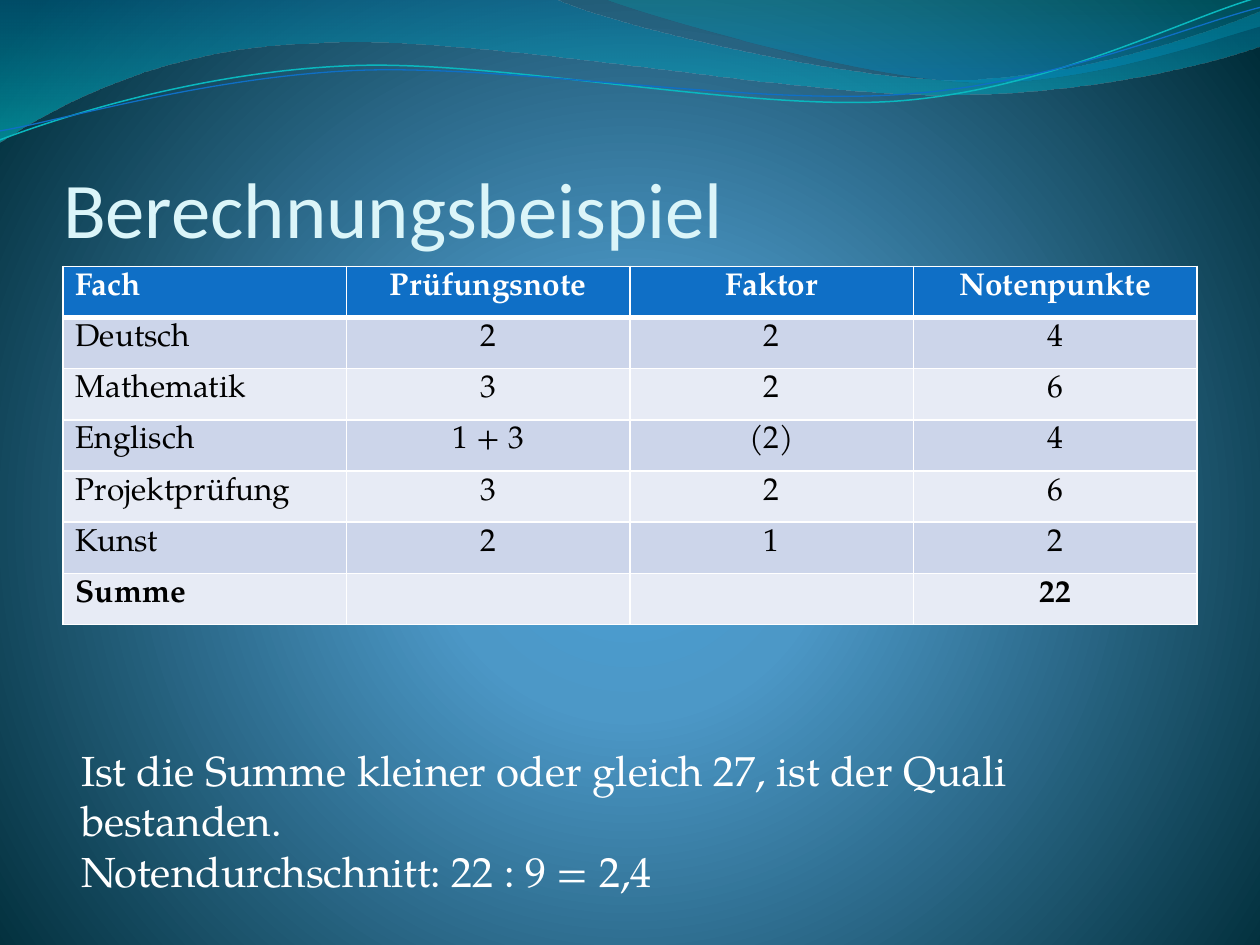
from lxml.etree import SubElement
from pptx import Presentation
from pptx.dml.color import RGBColor
from pptx.enum.text import MSO_ANCHOR, MSO_AUTO_SIZE, PP_ALIGN
from pptx.oxml.ns import qn
from pptx.util import Cm, Pt

WHITE = RGBColor(0xFF, 0xFF, 0xFF)
BLACK = RGBColor(0x00, 0x00, 0x00)
BLUE = RGBColor(0x0F, 0x6F, 0xC6)
TURQUOISE = RGBColor(0x0A, 0xB8, 0xBF)
TITLE_COLOR = RGBColor(0xDB, 0xF5, 0xF9)
BANDS = RGBColor(0xE7, 0xEB, 0xF5), RGBColor(0xCC, 0xD5, 0xEA)

# Gradient stops: position in percent, colour, opacity in percent
BACKGROUND_STOPS = [
    (0, RGBColor(0x4A, 0xA0, 0xD6), 100),
    (25, RGBColor(0x4C, 0x98, 0xC7), 100),
    (100, RGBColor(0x00, 0x2C, 0x38), 100),
]
LONG_WAVE_STOPS = [
    (0, RGBColor(0x00, 0x74, 0xA1), 45),
    (100, RGBColor(0x00, 0xC6, 0xCF), 55),
]
RIGHT_WAVE_STOPS = [
    (0, RGBColor(0x00, 0xA1, 0xA9), 30),
    (80, RGBColor(0x00, 0x8B, 0xBF), 45),
]

# Outlines in cm: a start point, then lines (2 numbers) or Bézier curves (6)
LONG_WAVE = [
    (0, 0), (11.18, -0.03),
    (12.09, 0.43, 16.87, 1.6, 19.25, 1.6),
    (21.67, 1.6, 24.33, 0.66, 25.4, 0.23),
    (25.43, 0.91),
    (24.97, 1.12, 22.1, 1.93, 18.95, 1.91),
    (15.8, 1.91, 9.7, 0.71, 6.53, 0.86),
    (3.28, 0.91, 1.17, 2.11, -0.03, 2.87),
]
RIGHT_WAVE = [
    (12.17, -0.03),
    (12.93, 0.28, 17.32, 1.57, 19.53, 1.65),
    (21.74, 1.75, 24.41, 0.81, 25.4, 0.53),
    (25.4, 0),
]
# The two thin lines are tilted after drawing
TURQUOISE_LINE = [
    (-0.05, 2.22),
    (1.19, 1.82, 4.02, 1.04, 7.06, 1.06),
    (10.05, 1.07, 15.02, 2.37, 18.08, 2.29),
    (21.13, 2.2, 23.87, 0.91, 25.41, 0.55),
]
BLUE_LINE = [
    (-0.04, 2.04),
    (1.16, 1.9, 4.18, 1.15, 7.2, 1.16),
    (10.25, 1.18, 15.13, 2.25, 18.18, 2.16),
    (21.21, 2.1, 23.94, 1.06, 25.45, 0.75),
]
LINE_TILT = 357.3

BODY_FONT = "TeX Gyre Pagella"
GRADES = [
    ("Fach", "Prüfungsnote", "Faktor", "Notenpunkte"),
    ("Deutsch", "2", "2", "4"),
    ("Mathematik", "3", "2", "6"),
    ("Englisch", "1 + 3", "(2)", "4"),
    ("Projektprüfung", "3", "2", "6"),
    ("Kunst", "2", "1", "2"),
    ("Summe", "", "", "22"),
]
RESULT = (
    "Ist die Summe kleiner oder gleich 27, ist der Quali bestanden.\n"
    "Notendurchschnitt: 22 : 9 = 2,4"
)


def format_text(text_frame, font_name, size, color, bold=False):
    for paragraph in text_frame.paragraphs:
        for run in paragraph.runs:
            run.font.name = font_name
            run.font.size = Pt(size)
            run.font.color.rgb = color
            run.font.bold = bold


def set_gradient(properties, stops, circular=False):
    """Replace the solid fill of a properties element by a gradient."""
    solid = properties.find(qn("a:solidFill"))
    gradient = properties.makeelement(qn("a:gradFill"), {"rotWithShape": "1"})
    stop_list = SubElement(gradient, qn("a:gsLst"))
    for position, color, opacity in stops:
        stop = SubElement(stop_list, qn("a:gs"), pos=str(position * 1000))
        color_element = SubElement(stop, qn("a:srgbClr"), val=str(color))
        if opacity < 100:
            SubElement(color_element, qn("a:alpha"), val=str(opacity * 1000))
    if circular:
        focus = SubElement(gradient, qn("a:path"), path="circle")
        SubElement(focus, qn("a:fillToRect"),
                   l="10000", t="110000", r="10000", b="100000")
    else:
        SubElement(gradient, qn("a:lin"), ang="5400000", scaled="1")
    properties.replace(solid, gradient)


def add_outline(slide, outline, closed):
    """Draw an outline behind the title, turning point triples into curves."""
    start_x, start_y = outline[0]
    points = [(Cm(x), Cm(y)) for segment in outline[1:]
              for x, y in zip(segment[::2], segment[1::2])]
    builder = slide.shapes.build_freeform(Cm(start_x), Cm(start_y))
    builder.add_line_segments(points, close=closed)
    shape = builder.convert_to_shape()
    shape.shadow.inherit = False
    lines = iter(shape.element.findall(".//" + qn("a:lnTo")))
    for segment in outline[1:]:
        line = next(lines)
        if len(segment) == 6:
            curve = line.makeelement(qn("a:cubicBezTo"), {})
            line.addprevious(curve)
            for part in (line, next(lines), next(lines)):
                curve.append(part[0])
                part.getparent().remove(part)
    slide.shapes.title.element.addprevious(shape.element)
    return shape


def add_waves(slide):
    for outline, stops in ((LONG_WAVE, LONG_WAVE_STOPS),
                           (RIGHT_WAVE, RIGHT_WAVE_STOPS)):
        wave = add_outline(slide, outline, closed=True)
        wave.fill.solid()
        wave.line.fill.background()
        set_gradient(wave.element.spPr, stops)
    for outline, color, width in ((TURQUOISE_LINE, TURQUOISE, 0.85),
                                  (BLUE_LINE, BLUE, 0.75)):
        curve = add_outline(slide, outline, closed=False)
        curve.rotation = LINE_TILT
        curve.fill.background()
        curve.line.color.rgb = color
        curve.line.width = Pt(width)


def place_title(slide, left, top, width, height):
    title = slide.shapes.title
    title.left, title.top, title.width, title.height = left, top, width, height
    frame = title.text_frame
    frame.text = "Berechnungsbeispiel"
    frame.margin_left = frame.margin_right = frame.margin_bottom = 0
    frame.margin_top = Cm(0.13)
    frame.vertical_anchor = MSO_ANCHOR.BOTTOM
    frame.auto_size = MSO_AUTO_SIZE.NONE
    frame.paragraphs[0].alignment = PP_ALIGN.LEFT
    format_text(frame, "Calibri", 45, TITLE_COLOR)


def set_borders(cell, widths):
    """Give a cell white borders; widths are left, right, top, bottom."""
    properties = cell._tc.get_or_add_tcPr()
    for index, (side, width) in enumerate(zip("LRTB", widths)):
        line = properties.makeelement(qn(f"a:ln{side}"), {"w": str(Pt(width))})
        fill = SubElement(line, qn("a:solidFill"))
        SubElement(fill, qn("a:srgbClr"), val=str(WHITE))
        properties.insert(index, line)


def add_grade_table(slide, left, top, width, height):
    last = len(GRADES) - 1
    table = slide.shapes.add_table(
        len(GRADES), len(GRADES[0]), left, top, width, height).table
    table.horz_banding = False
    for row, values in enumerate(GRADES):
        for column, value in enumerate(values):
            cell = table.cell(row, column)
            if value:
                cell.text = value
            cell.fill.solid()
            cell.fill.fore_color.rgb = BANDS[row % 2] if row else BLUE
            if column:
                cell.text_frame.paragraphs[0].alignment = PP_ALIGN.CENTER
            format_text(cell.text_frame, BODY_FONT, 18,
                        BLACK if row else WHITE, bold=row in (0, last))
            set_borders(cell, (1, 1, 3 if row == 1 else 1, 1 if row else 3))


def add_result(slide, left, top, width, height):
    frame = slide.shapes.add_textbox(left, top, width, height).text_frame
    frame.word_wrap = True
    frame.auto_size = MSO_AUTO_SIZE.SHAPE_TO_FIT_TEXT
    frame.text = RESULT
    format_text(frame, BODY_FONT, 24, WHITE)


def main():
    presentation = Presentation()
    presentation.slide_width, presentation.slide_height = Cm(25.4), Cm(19.05)
    slide = presentation.slides.add_slide(presentation.slide_layouts[5])
    slide.background.fill.solid()
    set_gradient(slide.element.find(".//" + qn("p:bgPr")),
                 BACKGROUND_STOPS, circular=True)
    add_waves(slide)
    place_title(slide, Cm(1.27), Cm(1.96), Cm(22.86), Cm(3.17))
    add_grade_table(slide, Cm(1.27), Cm(5.37), Cm(22.86), Cm(7.22))
    add_result(slide, Cm(1.39), Cm(14.88), Cm(22.81), Cm(2.31))
    presentation.save("out.pptx")


if __name__ == "__main__":
    main()
